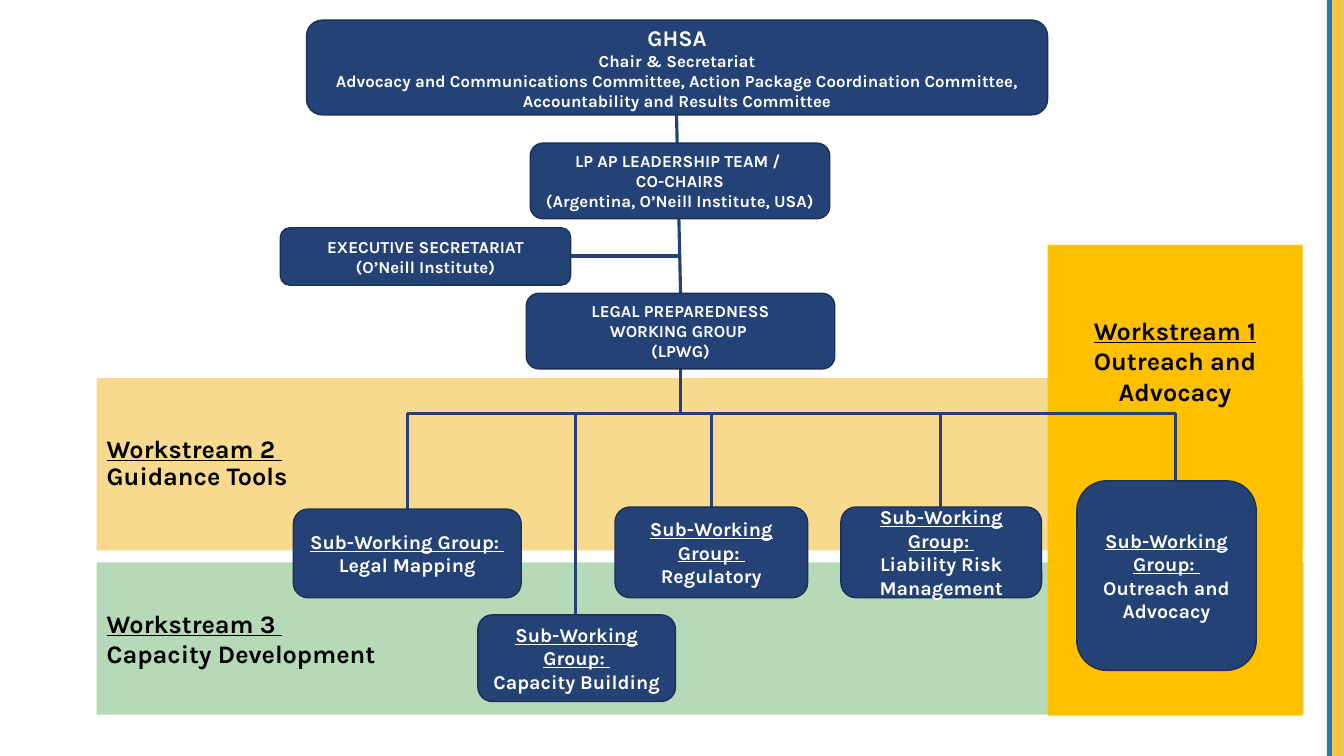
"""Build the GHSA legal preparedness organisation chart."""
from dataclasses import dataclass

from lxml import etree
from pptx import Presentation
from pptx import util as u
from pptx.dml.color import RGBColor
from pptx.enum import shapes, text
from pptx.oxml.ns import qn

FONT = "Karla"
NAVY, NAVY_EDGE = "254277", "1B3056"
WHITE, BLACK = "FFFFFF", "000000"
BUS_Y = 4.1
GROUP = "Sub-Working Group: "


@dataclass(frozen=True)
class Area:
    left: float
    top: float
    width: float
    height: float
    fill: str
    lines: tuple[str, ...] = ()
    centred: bool = False
    spacing: float = 1.0
    top_inset: float | None = None


@dataclass(frozen=True)
class Unit:
    left: float
    top: float
    width: float
    height: float
    lines: tuple[str, ...]
    size: int = 12
    heading_size: int | None = None
    underlined: bool = False


@dataclass(frozen=True)
class Link:
    x1: float
    y1: float
    x2: float
    y2: float


AREAS = (
    Area(13.2, 0, 0.14, 7.5, "F4C347"),
    Area(13.16, 0, 0.05, 7.5, "277AB1"),
    Area(0.96, 5.58, 11.97, 1.51, "B6D9B7", ("Workstream 3 ", "Capacity Development")),
    Area(0.96, 3.75, 11.97, 1.71, "F8DA8F", ("Workstream 2 ", "Guidance Tools"), spacing=0.9),
    Area(10.39, 2.43, 2.53, 4.67, "FFC000", ("Workstream 1", "Outreach and Advocacy"),
         centred=True, top_inset=0.7),
)

LEADERSHIP = (
    Unit(3.04, 0.2, 7.35, 0.94,
         ("GHSA", "Chair & Secretariat",
          "Advocacy and Communications Committee, Action Package Coordination Committee, "
          "Accountability and Results Committee"), heading_size=16),
    Unit(5.26, 1.42, 2.97, 0.75,
         ("LP AP LEADERSHIP TEAM / ", "CO-CHAIRS", "(Argentina, O’Neill Institute, USA)")),
    Unit(2.78, 2.26, 2.88, 0.57, ("EXECUTIVE SECRETARIAT", "(O’Neill Institute)")),
    Unit(5.22, 2.91, 3.06, 0.75, ("LEGAL PREPAREDNESS", "WORKING GROUP ", "(LPWG)")),
)

SUB_GROUPS = tuple(
    Unit(left, top, width, height, (GROUP, topic), size=14, underlined=True)
    for left, top, width, height, topic in (
        (2.91, 5.05, 2.26, 0.88, "Legal Mapping"),
        (4.74, 6.1, 1.96, 0.86, "Capacity Building"),
        (6.1, 5.03, 1.91, 0.9, "Regulatory"),
        (8.34, 5.03, 1.99, 0.9, "Liability Risk Management"),
        (10.68, 4.77, 1.78, 1.88, "Outreach and Advocacy"),
    )
)

DROP_XS = (4.04, 5.71, 7.06, 9.33, 11.66)
LINKS = (
    Link(6.71, 1.14, 6.75, 2.91),
    Link(5.66, 2.54, 6.75, 2.54),
    Link(6.75, 3.66, 6.75, BUS_Y),
    Link(DROP_XS[0], BUS_Y, DROP_XS[-1], BUS_Y),
    *(Link(x, BUS_Y, x, group.top) for x, group in zip(DROP_XS, SUB_GROUPS)),
)


def colour(value: str) -> RGBColor:
    return RGBColor.from_string(value)


def add_block(slide, kind, part: Area | Unit, fill: str):
    block = slide.shapes.add_shape(
        kind, u.Inches(part.left), u.Inches(part.top),
        u.Inches(part.width), u.Inches(part.height))
    block.shadow.inherit = False
    block.fill.solid()
    block.fill.fore_color.rgb = colour(fill)
    block.line.fill.background()
    return block


def write_lines(block, lines: tuple[str, ...], size: int, ink: str, centred: bool,
                underlined: bool, heading_size: int | None = None,
                spacing: float = 1.0) -> None:
    frame = block.text_frame
    frame.word_wrap = True
    frame.vertical_anchor = text.MSO_ANCHOR.MIDDLE
    frame.text = "\n".join(lines)
    for index, paragraph in enumerate(frame.paragraphs):
        paragraph.alignment = text.PP_ALIGN.CENTER if centred else text.PP_ALIGN.LEFT
        paragraph.line_spacing = spacing
        for run in paragraph.runs:
            run.font.name = FONT
            run.font.size = u.Pt(heading_size if heading_size and index == 0 else size)
            run.font.bold = True
            run.font.underline = underlined and index == 0
            run.font.color.rgb = colour(ink)


def add_area(slide, area: Area) -> None:
    block = add_block(slide, shapes.MSO_SHAPE.RECTANGLE, area, area.fill)
    if area.lines:
        write_lines(block, area.lines, 18, BLACK, area.centred, True, spacing=area.spacing)
    if area.top_inset is not None:
        block.text_frame.vertical_anchor = text.MSO_ANCHOR.TOP
        block.text_frame.margin_top = u.Inches(area.top_inset)


def add_unit(slide, unit: Unit) -> None:
    block = add_block(slide, shapes.MSO_SHAPE.ROUNDED_RECTANGLE, unit, NAVY)
    block.line.color.rgb = colour(NAVY_EDGE)
    block.line.width = u.Pt(1)
    write_lines(block, unit.lines, unit.size, WHITE, True, unit.underlined, unit.heading_size)


def add_link(slide, link: Link) -> None:
    connector = slide.shapes.add_connector(
        shapes.MSO_CONNECTOR.STRAIGHT, u.Inches(link.x1), u.Inches(link.y1),
        u.Inches(link.x2), u.Inches(link.y2))
    connector.line.color.rgb = colour(NAVY)
    connector.line.width = u.Pt(2.25)
    etree.SubElement(connector._element.spPr, qn("a:effectLst"))


def main() -> None:
    deck = Presentation()
    deck.slide_width, deck.slide_height = u.Inches(13.33), u.Inches(7.5)
    slide = deck.slides.add_slide(deck.slide_layouts[6])
    for area in AREAS:
        add_area(slide, area)
    for link in LINKS:
        add_link(slide, link)
    for unit in LEADERSHIP + SUB_GROUPS:
        add_unit(slide, unit)
    deck.save("out.pptx")


if __name__ == "__main__":
    main()
